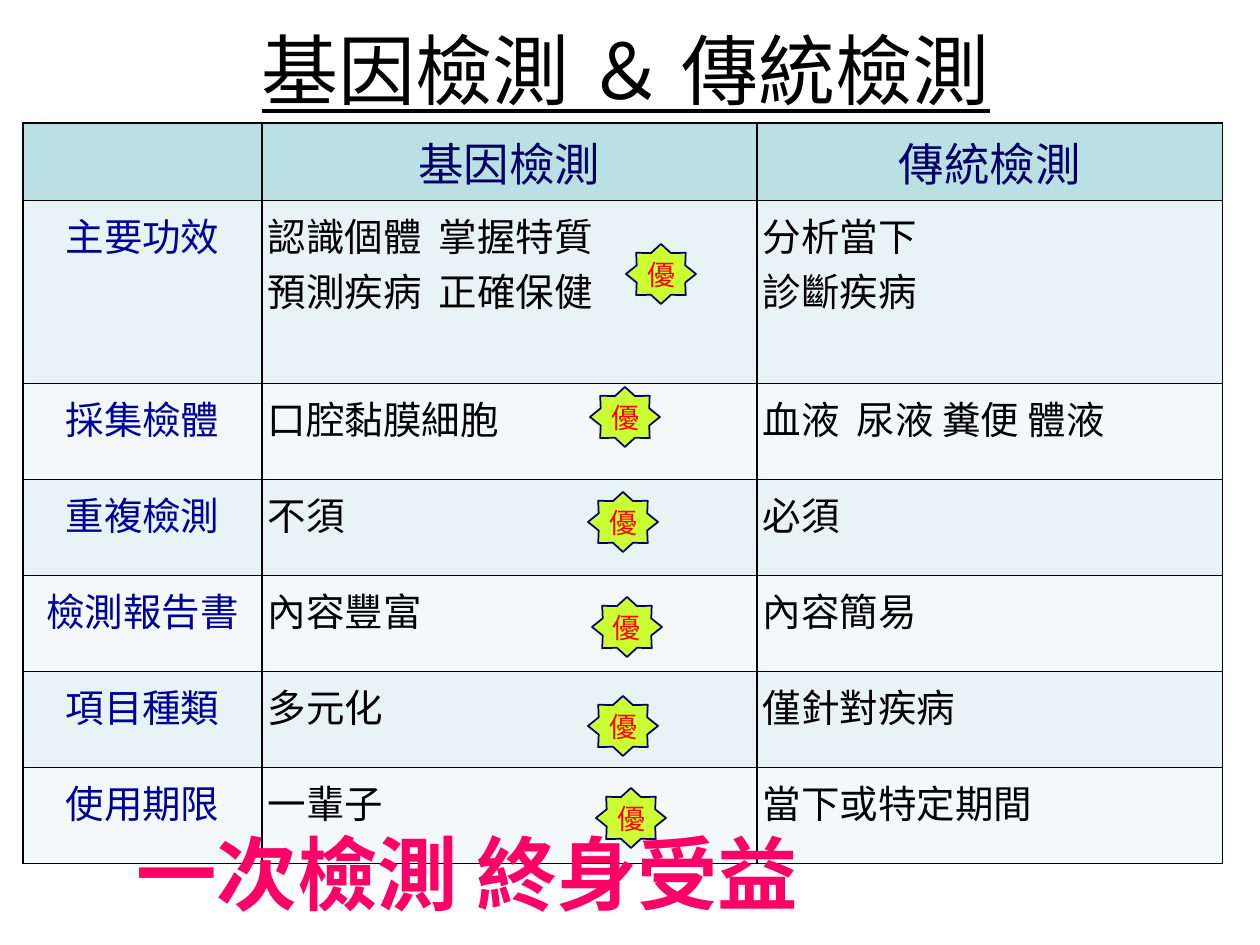
from lxml import etree
from pptx import Presentation
from pptx.dml.color import RGBColor
from pptx.enum.shapes import MSO_SHAPE
from pptx.enum.text import MSO_ANCHOR, PP_ALIGN
from pptx.oxml.ns import qn
from pptx.util import Emu, Pt

PX = 914400 // 126
INSET = 6
STAR = MSO_SHAPE.STAR_8_POINT
LEFT, CENTER = PP_ALIGN.LEFT, PP_ALIGN.CENTER
TOP, MIDDLE = MSO_ANCHOR.TOP, MSO_ANCHOR.MIDDLE
BODY_FONT, ACCENT_FONT = "Noto Sans CJK SC", "Noto Sans CJK TC"
BLACK, NAVY, BLUE = "000000", "000066", "000099"
RED, PINK, LIME = "FF0000", "FF0066", "CCFF33"
HEADER_FILL, BAND_FILLS = "BBE0E3", ("E7F3F4", "F3F9FA")


def px(length):
    return Emu(length * PX)


def color(value):
    return RGBColor.from_string(value)


class SlideBuilder:
    def __init__(self, slide):
        self.slide = slide

    def fonts(self, paragraph, size, ink, name, align, bold=False, underline=False):
        paragraph.alignment = align
        font = paragraph.font
        font.size, font.name, font.bold, font.underline = Pt(size), name, bold, underline
        font.color.rgb = color(ink)
        # East Asian characters take their own typeface
        properties = font._element
        etree.SubElement(properties, qn("a:ea")).set("typeface", name)

    def fill_frame(self, frame, text, size, ink, name, align=CENTER, anchor=TOP, **style):
        frame.word_wrap = True
        frame.vertical_anchor = anchor
        frame.margin_left = frame.margin_right = px(INSET)
        frame.margin_top = frame.margin_bottom = px(INSET)
        frame.text = text
        for paragraph in frame.paragraphs:
            self.fonts(paragraph, size, ink, name, align, **style)

    def title(self, box, text):
        title = self.slide.shapes.title
        title.left, title.top, title.width, title.height = map(px, box)
        self.fill_frame(title.text_frame, text, 44, BLACK, BODY_FONT, underline=True)

    def text(self, box, text, size, ink, shapes=None, **style):
        textbox = (shapes or self.slide.shapes).add_textbox(*map(px, box))
        self.fill_frame(textbox.text_frame, text, size, ink, ACCENT_FONT, **style)

    def cell(self, cell, text, fill, size, ink, align):
        cell.fill.solid()
        cell.fill.fore_color.rgb = color(fill)
        cell.margin_left = cell.margin_right = px(INSET)
        cell.margin_top = cell.margin_bottom = px(INSET)
        cell.text = text
        for paragraph in cell.text_frame.paragraphs:
            self.fonts(paragraph, size, ink, BODY_FONT, align)
        # Borders come before the fill in the cell properties
        properties = cell._tc.get_or_add_tcPr()
        for index, side in enumerate(("lnL", "lnR", "lnT", "lnB")):
            border = etree.Element(qn(f"a:{side}"), w=str(Pt(0.75)))
            solid = etree.SubElement(border, qn("a:solidFill"))
            etree.SubElement(solid, qn("a:srgbClr"), val=BLACK)
            properties.insert(index, border)

    def table(self, left, top, widths, heights, rows):
        box = (left, top, sum(widths), sum(heights))
        table = self.slide.shapes.add_table(len(rows), len(widths), *map(px, box)).table
        for column, width in zip(table.columns, widths):
            column.width = px(width)
        for r, (row, height) in enumerate(zip(rows, heights)):
            table.rows[r].height = px(height)
            for c, text in enumerate(row):
                if r == 0:
                    style = (HEADER_FILL, 26, NAVY, CENTER)
                else:
                    ink, align = (BLUE, CENTER) if c == 0 else (BLACK, LEFT)
                    style = (BAND_FILLS[(r - 1) % 2], 22, ink, align)
                self.cell(table.cell(r, c), text, *style)

    def badge(self, left, top, text):
        shapes = self.slide.shapes.add_group_shape().shapes
        star = shapes.add_shape(STAR, *map(px, (left, top, 70, 60)))
        star.shadow.inherit = False
        star.adjustments[0] = 0.375
        star.fill.solid()
        star.fill.fore_color.rgb = color(LIME)
        star.line.color.rgb = color(NAVY)
        star.line.width = Pt(1)
        self.text((left + 11, top + 4, 48, 52), text, 16, RED, shapes, anchor=MIDDLE)


def main():
    deck = Presentation()
    deck.slide_width, deck.slide_height = px(1260), px(945)
    builder = SlideBuilder(deck.slides.add_slide(deck.slide_layouts[5]))

    builder.title((59, 16, 1134, 93), "基因檢測 ＆ 傳統檢測")

    # Comparison table
    comparison = [
        ("", "基因檢測", "傳統檢測"),
        ("主要功效", "認識個體  掌握特質\n預測疾病  正確保健", "分析當下\n診斷疾病"),
        ("採集檢體", "口腔黏膜細胞", "血液  尿液 糞便 體液"),
        ("重複檢測", "不須", "必須"),
        ("檢測報告書", "內容豐富", "內容簡易"),
        ("項目種類", "多元化", "僅針對疾病"),
        ("使用期限", "一輩子", "當下或特定期間"),
    ]
    builder.table(23, 123, (239, 495, 466), (61, 183) + (96,) * 5, comparison)

    # Advantage badges, one per compared row
    for left, top in ((626, 244), (590, 387), (588, 492), (592, 597), (588, 696), (596, 788)):
        builder.badge(left, top, "優")

    # Closing slogan
    builder.text((86, 818, 762, 126), "一次檢測 終身受益", 46, PINK, bold=True)

    deck.save("out.pptx")


if __name__ == "__main__":
    main()
